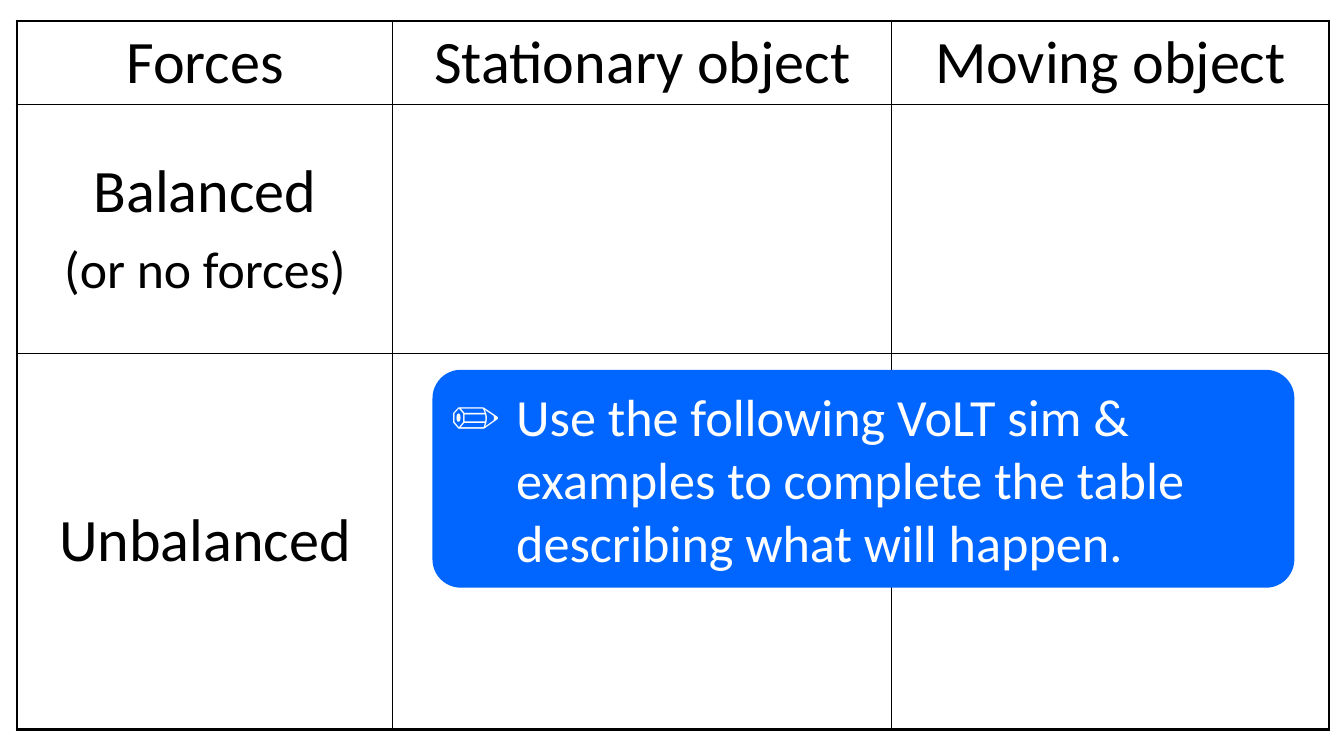
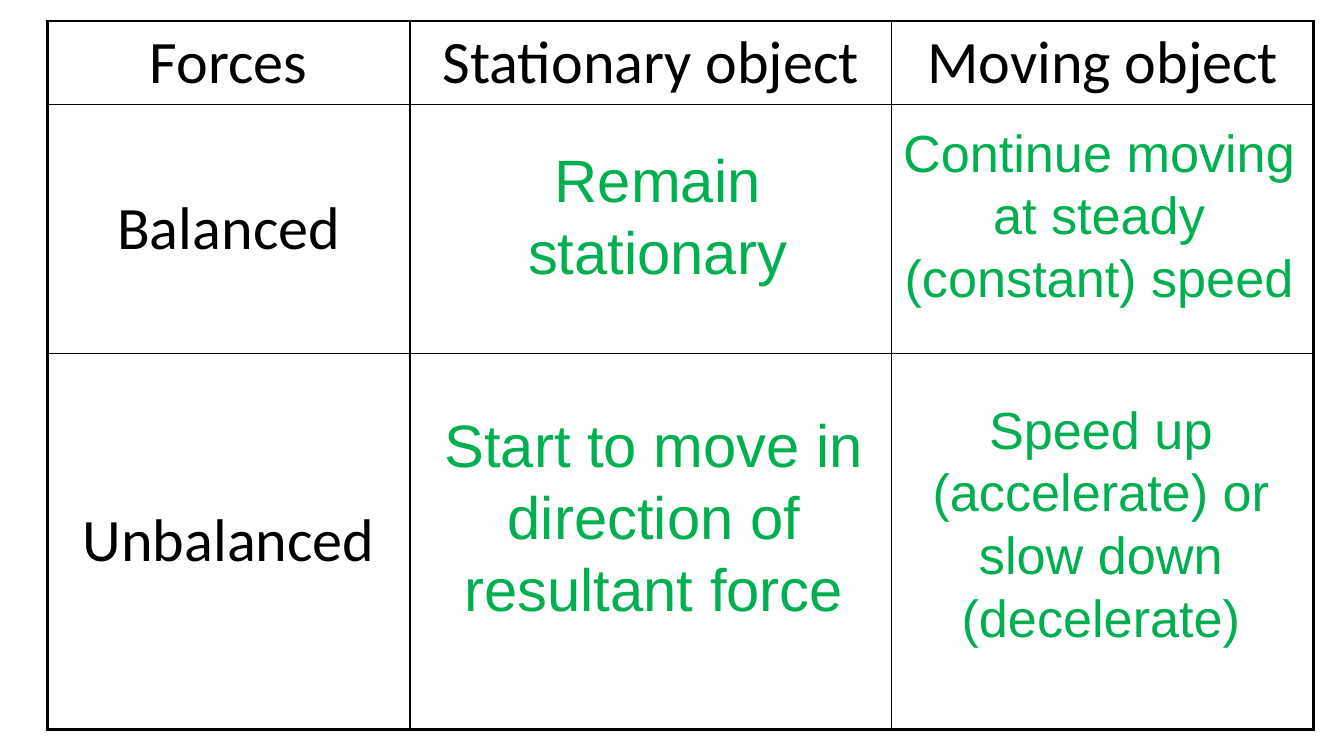
from dataclasses import dataclass

from lxml.etree import SubElement
from pptx import Presentation
from pptx.dml.color import RGBColor
from pptx.enum.shapes import MSO_SHAPE as Preset
from pptx.enum.text import MSO_ANCHOR as Anchor, PP_ALIGN as Align
from pptx.oxml.ns import qn
from pptx.util import Cm, Pt


@dataclass(frozen=True)
class Theme:
    ink: str = "000000"
    paper: str = "FFFFFF"
    panel: str = "0066FF"
    answer: str = "00B050"
    heading_font: str = "Calibri"
    answer_font: str = "Arial"
    heading_size: float = 43
    note_size: float = 37
    large_size: float = 42.7
    body_size: float = 37.3
    outer_line: float = 2.25
    inner_line: float = 1


TABLE_TOP = 0.53
ROW_HEIGHTS = (2.06, 6.27, 9.47)
HEADERS = ("Forces", "Stationary object", "Moving object")


class ForcesDeck:
    def __init__(self, theme):
        self.theme = theme
        self.deck = Presentation()
        self.deck.slide_width = Cm(33.87)
        self.deck.slide_height = Cm(19.05)
        self.page = None

    def new_page(self):
        self.page = self.deck.slides.add_slide(self.deck.slide_layouts[6])

    def add_span(self, para, text, size, font, color):
        span = para.add_run()
        span.text = text
        span.font.size = Pt(size)
        span.font.name = font
        span.font.color.rgb = RGBColor.from_string(color)

    def border(self, cell, side, width):
        line = SubElement(cell._tc.get_or_add_tcPr(), qn(f"a:ln{side}"), w=str(Pt(width)))
        fill = SubElement(line, qn("a:solidFill"))
        SubElement(fill, qn("a:srgbClr"), val=self.theme.ink)

    def label(self, cell, lines):
        cell.vertical_anchor = Anchor.MIDDLE
        frame = cell.text_frame
        for index, (text, size) in enumerate(lines):
            para = frame.add_paragraph() if index else frame.paragraphs[0]
            para.alignment = Align.CENTER
            space = SubElement(para._p.get_or_add_pPr(), qn("a:spcBef"))
            SubElement(space, qn("a:spcPct"), val="20000")
            self.add_span(para, text, size, self.theme.heading_font, self.theme.ink)

    def forces_table(self, left, widths, balanced_note=None):
        theme = self.theme
        last_row, last_column = len(ROW_HEIGHTS) - 1, len(widths) - 1
        frame = self.page.shapes.add_table(
            len(ROW_HEIGHTS), len(widths), Cm(left), Cm(TABLE_TOP),
            Cm(sum(widths)), Cm(sum(ROW_HEIGHTS)))
        table = frame.table
        table.first_row = table.horz_banding = False
        for column, width in zip(table.columns, widths):
            column.width = Cm(width)
        for row, height in zip(table.rows, ROW_HEIGHTS):
            row.height = Cm(height)
        for row in range(last_row + 1):
            for column in range(last_column + 1):
                cell = table.cell(row, column)
                edges = {"L": column == 0, "R": column == last_column,
                         "T": row == 0, "B": row == last_row}
                for side, outer in edges.items():
                    self.border(cell, side, theme.outer_line if outer else theme.inner_line)
                cell.fill.background()
        for column, header in enumerate(HEADERS):
            self.label(table.cell(0, column), [(header, theme.heading_size)])
        balanced = [("Balanced", theme.heading_size)]
        if balanced_note:
            balanced.append((balanced_note, theme.note_size))
        self.label(table.cell(1, 0), balanced)
        self.label(table.cell(2, 0), [("Unbalanced", theme.heading_size)])

    def task_panel(self, left, top, width, height, text):
        theme = self.theme
        panel = self.page.shapes.add_shape(
            Preset.ROUNDED_RECTANGLE, Cm(left), Cm(top), Cm(width), Cm(height))
        panel.adjustments[0] = 0.13
        panel.shadow.inherit = False
        panel.fill.solid()
        panel.fill.fore_color.rgb = RGBColor.from_string(theme.panel)
        panel.line.fill.background()
        frame = panel.text_frame
        frame.word_wrap = True
        frame.vertical_anchor = Anchor.MIDDLE
        para = frame.paragraphs[0]
        para.alignment = Align.LEFT
        indent = Cm(1.65)
        properties = para._p.get_or_add_pPr()
        properties.set("marL", str(indent))
        properties.set("indent", str(-indent))
        self.add_span(para, text, theme.body_size, theme.heading_font, theme.paper)

    def answer(self, left, top, width, height, text, size):
        box = self.page.shapes.add_textbox(Cm(left), Cm(top), Cm(width), Cm(height))
        frame = box.text_frame
        frame.word_wrap = True
        para = frame.paragraphs[0]
        para.alignment = Align.CENTER
        self.add_span(para, text, size, self.theme.answer_font, self.theme.answer)

    def save(self):
        self.deck.save("out.pptx")


def main():
    theme = Theme()
    forces = ForcesDeck(theme)

    forces.new_page()
    forces.forces_table(0.43, (9.47, 12.57, 11.02), "(or no forces)")
    forces.task_panel(
        10.9, 9.32, 21.72, 5.49,
        "✏\tUse the following VoLT sim & examples to complete the table "
        "describing what will happen.")

    forces.new_page()
    forces.forces_table(1.19, (9.14, 12.14, 10.64))
    answers = (
        (11.81, 3.48, 9.53, 3.91, "Remain stationary", theme.large_size),
        (22.38, 2.9, 10.64, 5.05, "Continue moving at steady (constant) speed", theme.body_size),
        (10.46, 10.16, 12.04, 5.74, "Start to move in direction of resultant force", theme.large_size),
        (22.73, 9.88, 10.03, 6.63, "Speed up (accelerate) or slow down (decelerate)", theme.body_size),
    )
    for item in answers:
        forces.answer(*item)
    forces.save()


if __name__ == "__main__":
    main()
